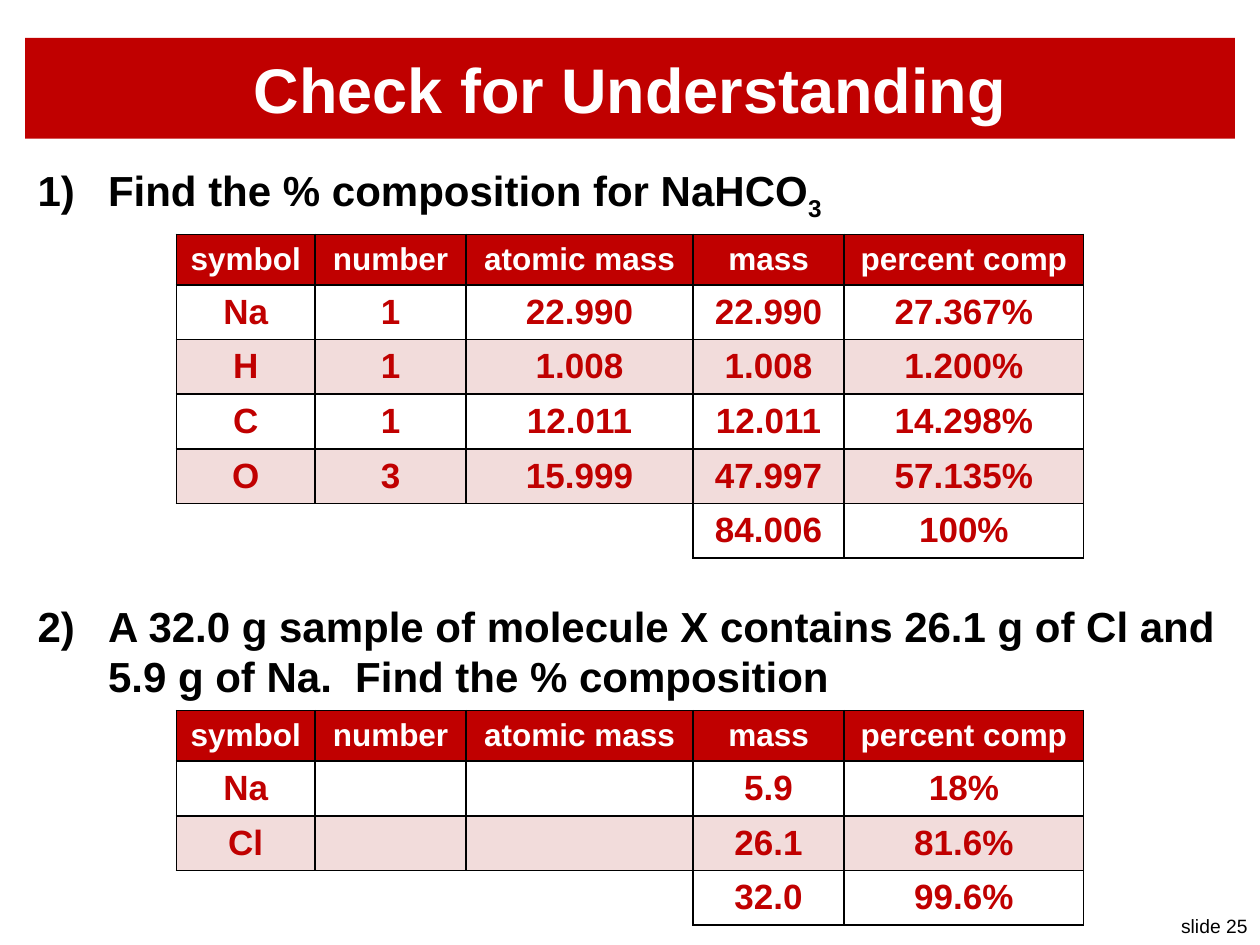
from lxml import etree
from pptx import Presentation
from pptx.dml.color import RGBColor
from pptx.enum.text import MSO_ANCHOR, PP_ALIGN
from pptx.oxml.ns import qn
from pptx.util import Inches, Pt

LEFT, CENTER, RIGHT = PP_ALIGN.LEFT, PP_ALIGN.CENTER, PP_ALIGN.RIGHT
MIDDLE = MSO_ANCHOR.MIDDLE

RED = RGBColor(0xC0, 0x00, 0x00)
PINK = RGBColor(0xF2, 0xDC, 0xDB)
WHITE = RGBColor(0xFF, 0xFF, 0xFF)
BLACK = RGBColor(0x00, 0x00, 0x00)

HEADINGS = ["symbol", "number", "atomic mass", "mass", "percent comp"]
COLUMN_WIDTHS = [1.1, 1.2, 1.8, 1.2, 1.9]
HEADING_HEIGHT, ROW_HEIGHT = 0.38, 0.42
LABEL_COLUMNS = 3

BICARBONATE = [
    ["Na", "1", "22.990", "22.990", "27.367%"],
    ["H", "1", "1.008", "1.008", "1.200%"],
    ["C", "1", "12.011", "12.011", "14.298%"],
    ["O", "3", "15.999", "47.997", "57.135%"],
    ["", "", "", "84.006", "100%"],
]
MOLECULE_X = [
    ["Na", "", "", "5.9", "18%"],
    ["Cl", "", "", "26.1", "81.6%"],
    ["", "", "", "32.0", "99.6%"],
]
QUESTIONS = [
    (12, "Find the % composition for NaHCO", "3"),
    (216, "A 32.0 g sample of molecule X contains 26.1 g of Cl and "
          "5.9 g of Na.  Find the % composition", ""),
]


def write(paragraph, text, size=24, color=BLACK, bold=True, align=LEFT, baseline=None):
    paragraph.alignment = align
    run = paragraph.add_run()
    run.text = text
    font = run.font
    font.name, font.size, font.bold = "Arial", Pt(size), bold
    font.color.rgb = color
    if baseline is not None:
        font._element.set("baseline", str(baseline * 1000))


def number_item(paragraph, indent):
    properties = paragraph._p.get_or_add_pPr()
    properties.set("marL", str(indent))
    properties.set("indent", str(-indent))
    etree.SubElement(properties, qn("a:buFont"), typeface="+mj-lt")
    etree.SubElement(properties, qn("a:buAutoNum"), type="arabicParenR")


def draw_borders(cell, sides):
    properties = cell._tc.get_or_add_tcPr()
    for side in "LRTB":
        border = etree.SubElement(properties, qn(f"a:ln{side}"), w=str(Pt(1)))
        if side in sides:
            fill = etree.SubElement(border, qn("a:solidFill"))
            etree.SubElement(fill, qn("a:srgbClr"), val=str(BLACK))
        else:
            etree.SubElement(border, qn("a:noFill"))


class Lesson:
    def __init__(self, presentation):
        self.slide = presentation.slides.add_slide(presentation.slide_layouts[5])

    def title(self, text, left, top, width, height):
        banner = self.slide.shapes.title
        banner.left, banner.top = Inches(left), Inches(top)
        banner.width, banner.height = Inches(width), Inches(height)
        banner.fill.solid()
        banner.fill.fore_color.rgb = RED
        banner.text_frame.vertical_anchor = MIDDLE
        write(banner.text_frame.paragraphs[0], text, size=36, color=WHITE, align=CENTER)

    def text_frame(self, left, top, width, height):
        box = self.slide.shapes.add_textbox(
            Inches(left), Inches(top), Inches(width), Inches(height))
        box.text_frame.word_wrap = True
        return box.text_frame

    def questions(self, items, left, top, width, height):
        frame = self.text_frame(left, top, width, height)
        for position, (space, text, subscript) in enumerate(items):
            paragraph = frame.add_paragraph() if position else frame.paragraphs[0]
            paragraph.space_before = Pt(space)
            number_item(paragraph, Inches(0.56))
            write(paragraph, text)
            if subscript:
                write(paragraph, subscript, baseline=-25)

    def slide_label(self, text, left, top, width, height):
        frame = self.text_frame(left, top, width, height)
        write(frame.paragraphs[0], text, size=11, bold=False, align=RIGHT)

    def composition_table(self, rows, left, top):
        heights = [HEADING_HEIGHT] + [ROW_HEIGHT] * len(rows)
        table = self.slide.shapes.add_table(
            len(heights), len(HEADINGS), Inches(left), Inches(top),
            Inches(sum(COLUMN_WIDTHS)), Inches(sum(heights))).table
        table.first_row = table.horz_banding = False
        for column, width in zip(table.columns, COLUMN_WIDTHS):
            column.width = Inches(width)
        for r, values in enumerate([HEADINGS] + rows):
            table.rows[r].height = Inches(heights[r])
            for c, value in enumerate(values):
                self.composition_cell(table.cell(r, c), value, r, c, r == len(rows))

    def composition_cell(self, cell, value, row, column, is_total):
        heading = row == 0
        blank = is_total and column < LABEL_COLUMNS
        sides = "LRTB"
        if blank:
            sides = "TR" if column == LABEL_COLUMNS - 1 else "T"
        draw_borders(cell, sides)
        if heading or (row % 2 == 0 and not is_total):
            cell.fill.solid()
            cell.fill.fore_color.rgb = RED if heading else PINK
        else:
            cell.fill.background()
        cell.vertical_anchor = MIDDLE
        if value:
            write(cell.text_frame.paragraphs[0], value, size=18 if heading else 20,
                  color=WHITE if heading else RED, align=CENTER)


def main():
    presentation = Presentation()
    presentation.slide_width, presentation.slide_height = Inches(10), Inches(7.5)
    lesson = Lesson(presentation)
    lesson.slide_label("slide 25", 9.25, 7.21, 0.75, 0.29)
    lesson.title("Check for Understanding", 0.2, 0.3, 9.6, 0.8)
    lesson.questions(QUESTIONS, 0.2, 1.26, 9.6, 6.01)
    lesson.composition_table(BICARBONATE, 1.4, 1.86)
    lesson.composition_table(MOLECULE_X, 1.4, 5.64)
    presentation.save("out.pptx")


if __name__ == "__main__":
    main()
